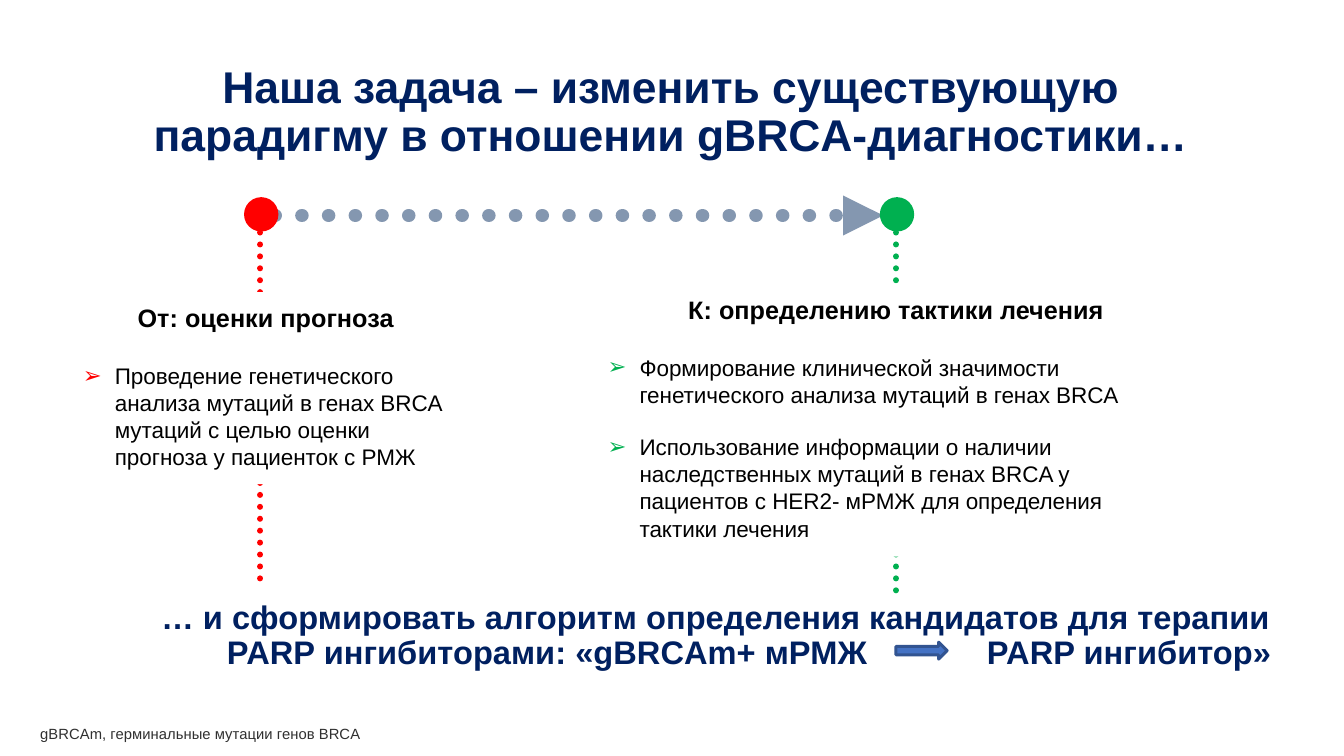
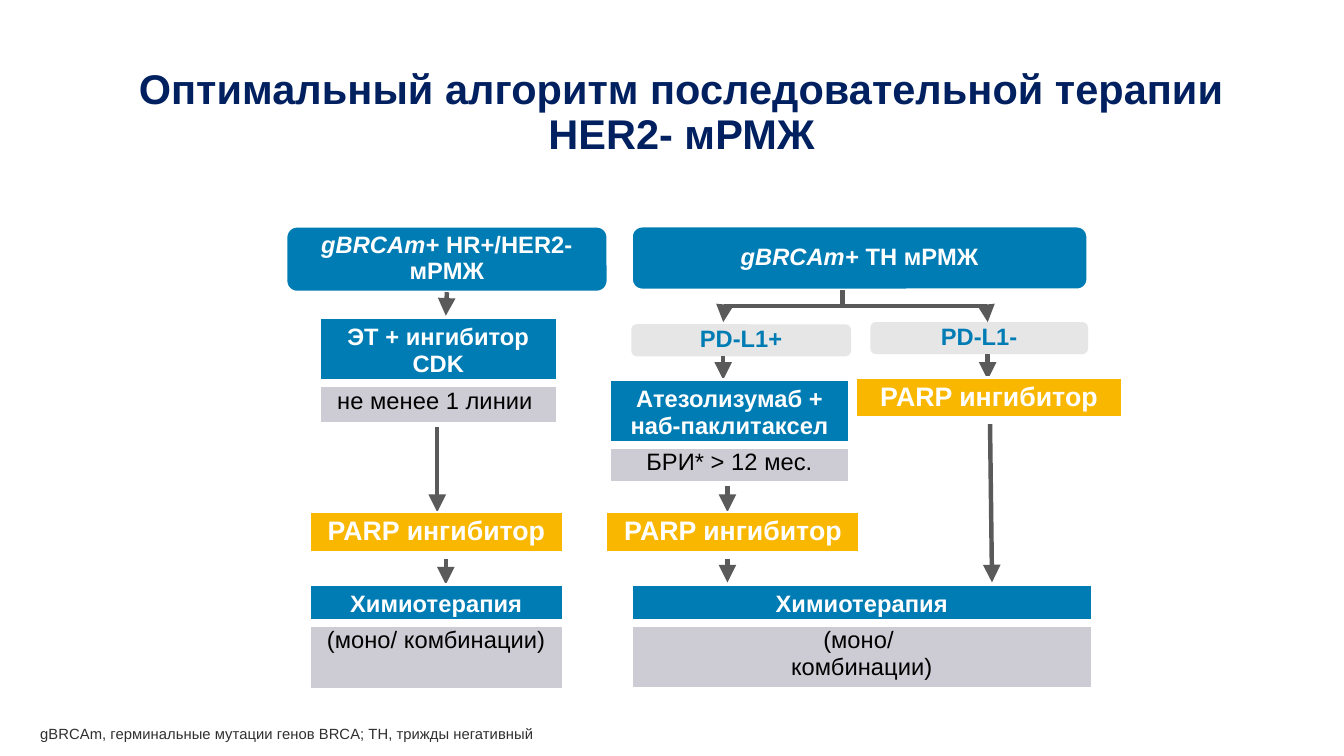
from lxml import etree
from pptx import Presentation
from pptx.dml.color import RGBColor
from pptx.enum.dml import MSO_LINE
from pptx.enum.shapes import MSO_CONNECTOR, MSO_SHAPE
from pptx.enum.text import MSO_ANCHOR, PP_ALIGN
from pptx.oxml.ns import qn
from pptx.util import Inches, Pt

LEFT, CENTER, RIGHT = PP_ALIGN.LEFT, PP_ALIGN.CENTER, PP_ALIGN.RIGHT
TOP, MIDDLE = MSO_ANCHOR.TOP, MSO_ANCHOR.MIDDLE
STRAIGHT, ELBOW = MSO_CONNECTOR.STRAIGHT, MSO_CONNECTOR.ELBOW
RECTANGLE, ROUNDED = MSO_SHAPE.RECTANGLE, MSO_SHAPE.ROUNDED_RECTANGLE
ELLIPSE, RIGHT_ARROW = MSO_SHAPE.OVAL, MSO_SHAPE.RIGHT_ARROW
DOTS = MSO_LINE.ROUND_DOT

NAVY = RGBColor(0x00, 0x20, 0x60)
BLACK = RGBColor(0x00, 0x00, 0x00)
WHITE = RGBColor(0xFF, 0xFF, 0xFF)
RED = RGBColor(0xFF, 0x00, 0x00)
GREEN = RGBColor(0x00, 0xB0, 0x50)
STEEL = RGBColor(0x84, 0x97, 0xB0)
BLUE = RGBColor(0x00, 0x7C, 0xB4)
YELLOW = RGBColor(0xF9, 0xB7, 0x00)
PALE = RGBColor(0xE7, 0xE6, 0xE6)
LILAC = RGBColor(0xCD, 0xCC, 0xD4)
GRAPHITE = RGBColor(0x5A, 0x5A, 0x5A)
FOOTNOTE = RGBColor(0x30, 0x30, 0x30)
ARROW_FILL = RGBColor(0x44, 0x72, 0xC4)
ARROW_EDGE = RGBColor(0x32, 0x54, 0x91)

FONT = "Arial"
TIGHT = (0.05, 0.02)
SLIDE_WIDTH = 6.3
SLIDE_HEIGHT = SLIDE_WIDTH * 9 / 16


def add_text(paragraph, text, size=8, color=BLACK, bold=False, italic=False,
             align=LEFT, spacing=None, before=None, bullet=None, tracking=None):
    """Append a run to the paragraph and format both."""
    run = paragraph.add_run()
    run.text = text
    font = run.font
    font.name, font.size, font.bold, font.italic = FONT, Pt(size), bold, italic
    font.color.rgb = color
    paragraph.alignment = align
    if spacing:
        paragraph.line_spacing = spacing
    if before:
        paragraph.space_before = Pt(before)
    if tracking:
        run._r.get_or_add_rPr().set("spc", str(tracking * 100))
    if bullet:
        props = paragraph._p.get_or_add_pPr()
        props.set("marL", str(Inches(0.15)))
        props.set("indent", str(-Inches(0.15)))
        bullet_color = etree.SubElement(props, qn("a:buClr"))
        etree.SubElement(bullet_color, qn("a:srgbClr"), val=str(bullet))
        etree.SubElement(props, qn("a:buFont"), typeface=FONT)
        etree.SubElement(props, qn("a:buChar"), char="➢")


class Deck:
    def __init__(self, width, height):
        self.prs = Presentation()
        self.prs.slide_width, self.prs.slide_height = Inches(width), Inches(height)
        self.shapes = None

    def new_slide(self):
        self.shapes = self.prs.slides.add_slide(self.prs.slide_layouts[6]).shapes

    def textbox(self, box, anchor=TOP, insets=(0.1, 0.05)):
        frame = self.shapes.add_textbox(*map(Inches, box)).text_frame
        frame.word_wrap = True
        frame.vertical_anchor = anchor
        frame.margin_left = frame.margin_right = Inches(insets[0])
        frame.margin_top = frame.margin_bottom = Inches(insets[1])
        return frame.paragraphs[0]

    def title(self, text, box, size):
        add_text(self.textbox(box, MIDDLE), text, size=size, color=NAVY,
                 bold=True, align=CENTER, spacing=0.9)

    def footnote(self, text):
        add_text(self.textbox((0.09, 3.35, 5.91, 0.19)), text, size=5, color=FOOTNOTE)

    def shape(self, kind, box, fill, edge=None, width=1, anchor=MIDDLE):
        shape = self.shapes.add_shape(kind, *map(Inches, box))
        shape.shadow.inherit = False
        shape.fill.solid()
        shape.fill.fore_color.rgb = fill
        if edge is None:
            shape.line.fill.background()
        else:
            shape.line.color.rgb = edge
            shape.line.width = Pt(width)
        shape.text_frame.word_wrap = True
        shape.text_frame.vertical_anchor = anchor
        return shape

    def label(self, box, runs, fill, color, edge=None):
        """Rounded box; runs are (text, italic) pairs."""
        shape = self.shape(ROUNDED, box, fill, edge)
        for text, italic in runs:
            add_text(shape.text_frame.paragraphs[0], text, color=color, bold=True,
                     italic=italic, align=CENTER, spacing=0.9)
        return shape

    def panel(self, box, heading, points, accent):
        frame = self.shape(RECTANGLE, box, WHITE, anchor=TOP).text_frame
        add_text(frame.paragraphs[0], heading, size=8.5, bold=True, align=CENTER)
        for index, point in enumerate(points):
            add_text(frame.add_paragraph(), point, size=7.6, bullet=accent,
                     before=8.7 if index else 9.8)

    def line(self, start, end, color=GRAPHITE, width=1.5, dash=None, arrow=True,
             kind=STRAIGHT):
        connector = self.shapes.add_connector(kind, *map(Inches, (*start, *end)))
        connector.line.color.rgb = color
        connector.line.width = Pt(width)
        props = connector._element.spPr
        ln = connector.line._get_or_add_ln()
        if dash:
            connector.line.dash_style = dash
            ln.set("cap", "rnd")
        if arrow:
            etree.SubElement(ln, qn("a:tailEnd"), type="triangle")
        etree.SubElement(props, qn("a:effectLst"))
        return connector

    def branch(self, start, end):
        """Elbow arrow that leaves downwards: a turned horizontal elbow."""
        (x1, y1), (x2, y2) = start, end
        mid_x, mid_y = (x1 + x2) / 2, (y1 + y2) / 2
        half_w, half_h = (y2 - y1) / 2, abs(x2 - x1) / 2
        side = 1 if x2 > x1 else -1
        elbow = self.line((mid_x + side * half_w, mid_y - half_h),
                          (mid_x - side * half_w, mid_y + half_h), kind=ELBOW)
        turn = 270 if side == 1 else 90
        elbow._element.spPr.find(qn("a:xfrm")).set("rot", str(turn * 60000))

    def table(self, left, top, width, rows):
        """Rows are (height, lines, fill, anchor, text format)."""
        height = sum(row[0] for row in rows)
        table = self.shapes.add_table(
            len(rows), 1, *map(Inches, (left, top, width, height))).table
        table.first_row = table.horz_banding = False
        for index, (row_height, lines, fill, anchor, style) in enumerate(rows):
            table.rows[index].height = Inches(row_height)
            cell = table.cell(index, 0)
            cell.margin_left = cell.margin_right = Inches(TIGHT[0])
            cell.margin_top = cell.margin_bottom = Inches(TIGHT[1])
            cell.vertical_anchor = anchor
            cell.fill.solid()
            cell.fill.fore_color.rgb = fill
            self.borders(cell, top=3 if index else 1, bottom=1 if index else 3)
            frame = cell.text_frame
            for number, text in enumerate(lines):
                paragraph = frame.add_paragraph() if number else frame.paragraphs[0]
                add_text(paragraph, text, align=CENTER, **style)

    @staticmethod
    def borders(cell, top, bottom):
        props = cell._tc.get_or_add_tcPr()
        widths = {"a:lnL": 1, "a:lnR": 1, "a:lnT": top, "a:lnB": bottom}
        for position, (tag, width) in enumerate(widths.items()):
            border = etree.Element(qn(tag), w=str(Pt(width)))
            fill = etree.SubElement(border, qn("a:solidFill"))
            etree.SubElement(fill, qn("a:srgbClr"), val=str(WHITE))
            props.insert(position, border)

    def therapy(self, left, top, width, name, details, heights):
        self.table(left, top, width, [
            (heights[0], [name], BLUE, MIDDLE, dict(color=WHITE, bold=True)),
            (heights[1], details, LILAC, TOP, {})])

    def parp(self, left, top, width):
        self.table(left, top, width, [
            (0.2, ["PARP ингибитор"], YELLOW, TOP,
             dict(size=9, color=WHITE, bold=True))])


def paradigm_slide(deck):
    deck.new_slide()
    deck.title("Наша задача – изменить существующую парадигму в отношении "
               "gBRCA-диагностики…", (0.43, 0.19, 5.43, 0.68), 15)

    # Timeline from red to green
    deck.line((1.29, 1.01), (4.14, 1.01), STEEL, 4.5, DOTS)
    for x, bottom, dot_left, color in ((4.2, 2.8, 4.14, GREEN), (1.22, 2.75, 1.16, RED)):
        deck.line((x, 1.09), (x, bottom), color, 2, DOTS, arrow=False)
        deck.shape(ELLIPSE, (dot_left, 0.94, 0.13, 0.13), color, color, 2.25)

    # Panels over the dotted stems
    deck.panel((0.29, 1.37, 1.91, 0.9), "От: оценки прогноза", [
        "Проведение генетического анализа мутаций в генах BRCA мутаций с целью "
        "оценки прогноза у пациенток с РМЖ"], RED)
    deck.panel((2.75, 1.33, 2.9, 1.28), "К: определению тактики лечения", [
        "Формирование клинической значимости генетического анализа мутаций в генах BRCA",
        "Использование информации о наличии наследственных мутаций в генах BRCA у "
        "пациентов с HER2- мРМЖ для определения тактики лечения"], GREEN)

    # Conclusion, with a widened space for the arrow
    conclusion = deck.textbox((0.43, 2.82, 5.58, 0.33), MIDDLE, TIGHT)
    for text, tracking in (
            ("… и сформировать алгоритм определения кандидатов для терапии "
             "PARP ингибиторами: «gBRCAm+ мРМЖ", None),
            (" ", 37),
            ("PARP ингибитор»", None)):
        add_text(conclusion, text, size=11, color=NAVY, bold=True, align=RIGHT,
                 spacing=0.9, tracking=tracking)
    deck.footnote("gBRCAm, герминальные мутации генов BRCA")
    deck.shape(RIGHT_ARROW, (4.2, 3.01, 0.24, 0.08), ARROW_FILL, ARROW_EDGE)


def algorithm_slide(deck):
    deck.new_slide()
    deck.title("Оптимальный алгоритм последовательной терапии HER2- мРМЖ",
               (0.24, 0.19, 5.91, 0.68), 14)

    # Patient groups
    deck.label((2.96, 1.06, 2.14, 0.3), [("gBRCAm+ ", True), ("ТН мРМЖ", False)],
               BLUE, WHITE, WHITE)
    deck.label((2.96, 1.52, 1.03, 0.15), [("PD-L1+", False)], PALE, BLUE)
    deck.label((4.08, 1.51, 1.02, 0.15), [("PD-L1-", False)], PALE, BLUE)
    for x in (4.63, 3.39):
        deck.branch((3.95, 1.36), (x, 1.51))
    hormone_positive = deck.label(
        (1.34, 1.06, 1.51, 0.31), [("gBRCAm+ ", True), ("HR+/HER2- мРМЖ", False)],
        BLUE, WHITE, WHITE)
    deck.line((2.09, 1.37), (2.09, 1.48)).begin_connect(hormone_positive, 2)

    # Arrows between treatment steps
    for start, end in (
            ((3.39, 1.67), (3.39, 1.78)), ((4.63, 1.66), (4.63, 1.78)),
            ((2.05, 2.0), (2.05, 2.4)), ((2.09, 2.58), (2.09, 2.74)),
            ((3.41, 2.28), (3.41, 2.4)), ((3.41, 2.55), (3.41, 2.73)),
            ((4.64, 1.91), (4.65, 2.73))):
        deck.line(start, end)

    # Treatment steps
    deck.therapy(1.5, 1.49, 1.11, "ЭT + ингибитор CDK", ["не менее 1 линии "], (0.3, 0.19))
    deck.therapy(2.86, 1.78, 1.12, "Атезолизумаб + наб-паклитаксел",
                 ["БРИ* > 12 мес."], (0.3, 0.17))
    deck.therapy(1.45, 2.74, 1.19, "Химиотерапия", ["(моно/ комбинации)"], (0.18, 0.31))
    deck.therapy(2.96, 2.74, 2.16, "Химиотерапия", ["(моно/ ", "комбинации)"], (0.18, 0.3))
    for left, top, width in ((4.01, 1.77, 1.25), (2.84, 2.4, 1.19), (1.45, 2.4, 1.19)):
        deck.parp(left, top, width)
    deck.footnote("gBRCAm, герминальные мутации генов BRCA; ТН, трижды негативный")


def main():
    deck = Deck(SLIDE_WIDTH, SLIDE_HEIGHT)
    paradigm_slide(deck)
    algorithm_slide(deck)
    deck.prs.save("out.pptx")


if __name__ == "__main__":
    main()
